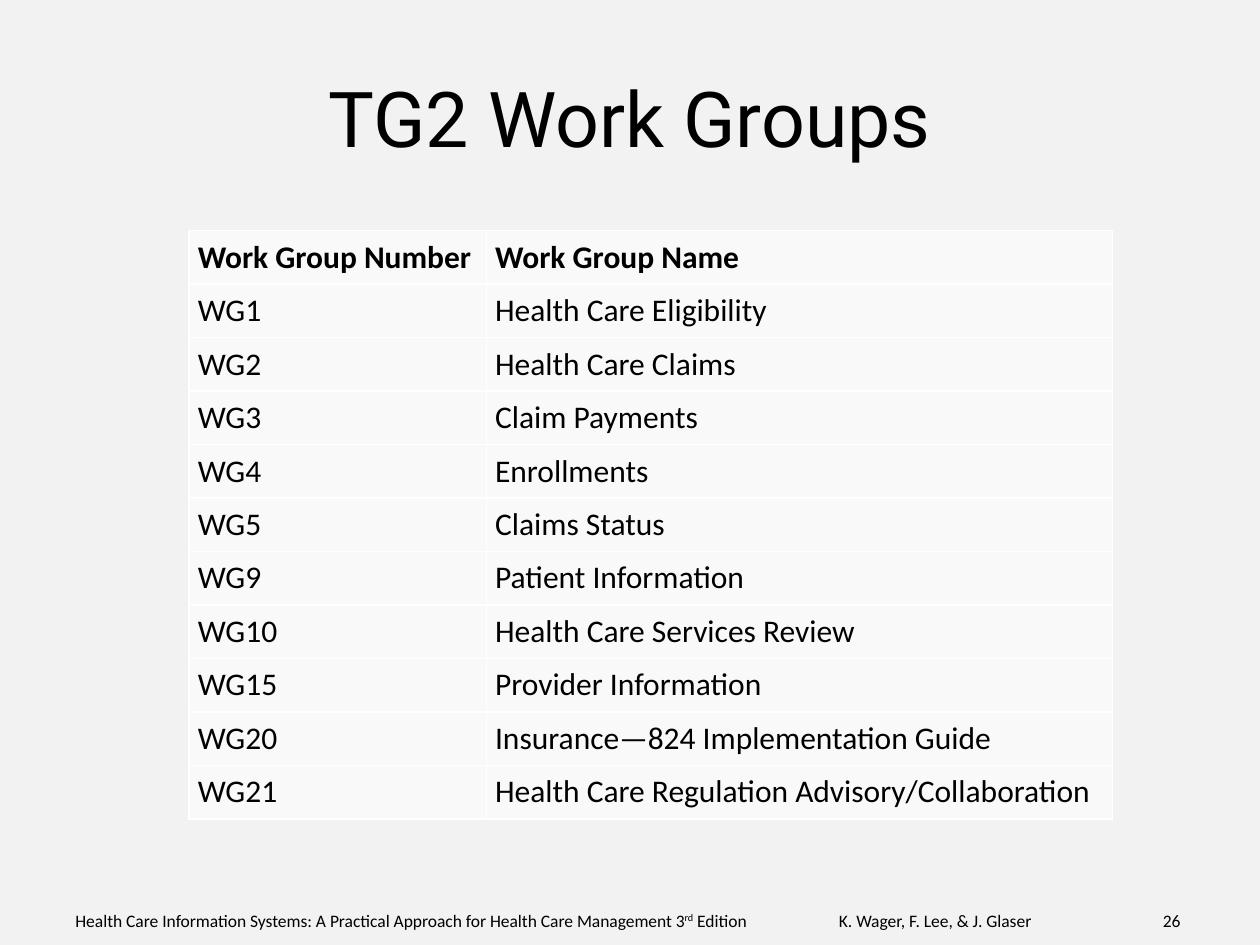
from lxml.etree import SubElement
from pptx import Presentation
from pptx.dml.color import RGBColor
from pptx.enum.text import MSO_ANCHOR, PP_ALIGN
from pptx.oxml.ns import qn
from pptx.util import Inches, Pt

BACKGROUND = RGBColor(0xF2, 0xF2, 0xF2)
CELL_FILL = RGBColor(0xF9, 0xF9, 0xF9)
BORDER = RGBColor(0xFF, 0xFF, 0xFF)
INK = RGBColor(0x00, 0x00, 0x00)

WORK_GROUPS = [
    ("Work Group Number", "Work Group Name"),
    ("WG1", "Health Care Eligibility"),
    ("WG2", "Health Care Claims"),
    ("WG3", "Claim Payments"),
    ("WG4", "Enrollments"),
    ("WG5", "Claims Status"),
    ("WG9", "Patient Information"),
    ("WG10", "Health Care Services Review"),
    ("WG15", "Provider Information"),
    ("WG20", "Insurance—824 Implementation Guide"),
    ("WG21", "Health Care Regulation Advisory/Collaboration"),
]


def add_span(para, text, size, font="Calibri", bold=False, baseline=None):
    """Append a formatted run to a paragraph."""
    span = para.add_run()
    span.text = text
    span.font.name = font
    span.font.size = Pt(size)
    span.font.bold = bold
    span.font.color.rgb = INK
    if baseline:
        span.font._element.set("baseline", str(baseline))


def add_box(page, left, top, width, height, anchor=MSO_ANCHOR.TOP):
    """Add a wrapping text box and return its first paragraph."""
    frame = page.shapes.add_textbox(
        Inches(left), Inches(top), Inches(width), Inches(height)
    ).text_frame
    frame.word_wrap = True
    frame.vertical_anchor = anchor
    return frame.paragraphs[0]


def add_tabs(para, stops):
    """Set tab stops given as pairs of position in inches and alignment."""
    tab_list = SubElement(para._p.get_or_add_pPr(), qn("a:tabLst"))
    for position, align in stops:
        SubElement(tab_list, qn("a:tab"), pos=str(Inches(position)), algn=align)


def add_borders(cell):
    """Draw a thin line on all four sides of a cell."""
    properties = cell._tc.get_or_add_tcPr()
    for side in ("lnL", "lnR", "lnT", "lnB"):
        line = SubElement(properties, qn(f"a:{side}"), w=str(Pt(1)))
        fill = SubElement(line, qn("a:solidFill"))
        SubElement(fill, qn("a:srgbClr"), val=str(BORDER))


def fill_cell(cell, text, header):
    """Write and style one table cell."""
    add_borders(cell)
    cell.fill.solid()
    cell.fill.fore_color.rgb = CELL_FILL
    cell.vertical_anchor = MSO_ANCHOR.MIDDLE
    cell.margin_left = cell.margin_right = Inches(0.07)
    cell.margin_top = cell.margin_bottom = 0
    para = cell.text_frame.paragraphs[0]
    if not header:
        para.space_after = Pt(3)
    add_span(para, text, 18, bold=header)


def add_group_table(page):
    """Add the table of work groups."""
    table = page.shapes.add_table(
        len(WORK_GROUPS), 2, Inches(1.5), Inches(1.83), Inches(7.33), Inches(4.67)
    ).table
    table.horz_banding = False
    for column, width in zip(table.columns, (2.36, 4.97)):
        column.width = Inches(width)
    for row, texts in enumerate(WORK_GROUPS):
        for column, text in enumerate(texts):
            fill_cell(table.cell(row, column), text, header=row == 0)


def add_footer(page):
    """Add the book title, its authors and the page number."""
    para = add_box(page, 0.5, 7.17, 9.08, 0.31)
    add_tabs(para, [(6.06, "l"), (8.77, "r")])
    add_span(
        para,
        "Health Care Information Systems: "
        "A Practical Approach for Health Care Management 3",
        10,
    )
    add_span(para, "rd", 10, baseline=30000)
    add_span(para, " Edition\tK. Wager, F. Lee, & J. Glaser\t26", 10)


def main():
    """Build the slide and save it."""
    deck = Presentation()
    deck.slide_width, deck.slide_height = Inches(10), Inches(7.5)
    page = deck.slides.add_slide(deck.slide_layouts[6])
    page.background.fill.solid()
    page.background.fill.fore_color.rgb = BACKGROUND
    add_footer(page)
    title = add_box(page, 0.5, 0.3, 9, 1.25, anchor=MSO_ANCHOR.MIDDLE)
    title.alignment = PP_ALIGN.CENTER
    add_span(title, "TG2 Work Groups", 44, font="Roboto")
    add_group_table(page)
    deck.save("out.pptx")


if __name__ == "__main__":
    main()
